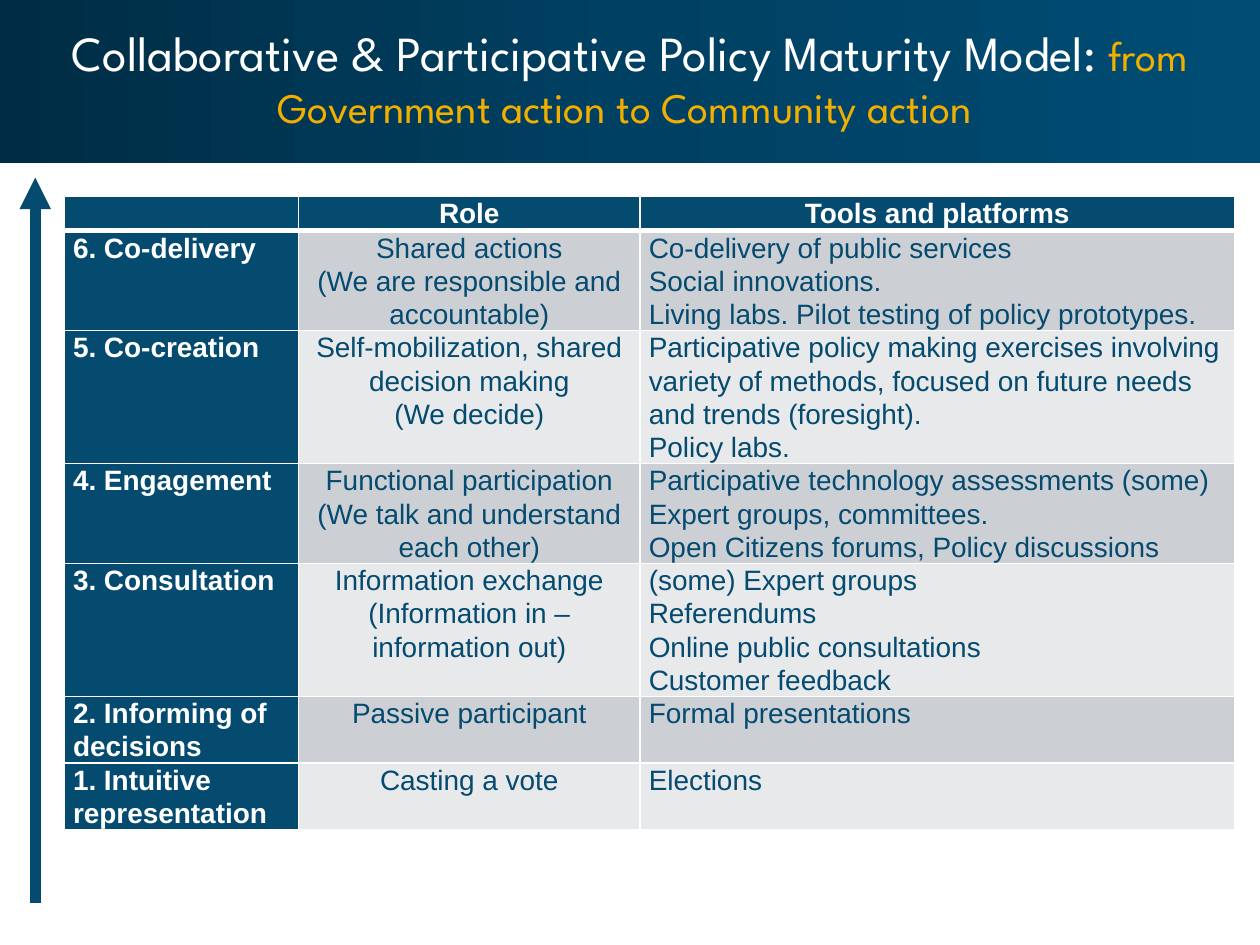
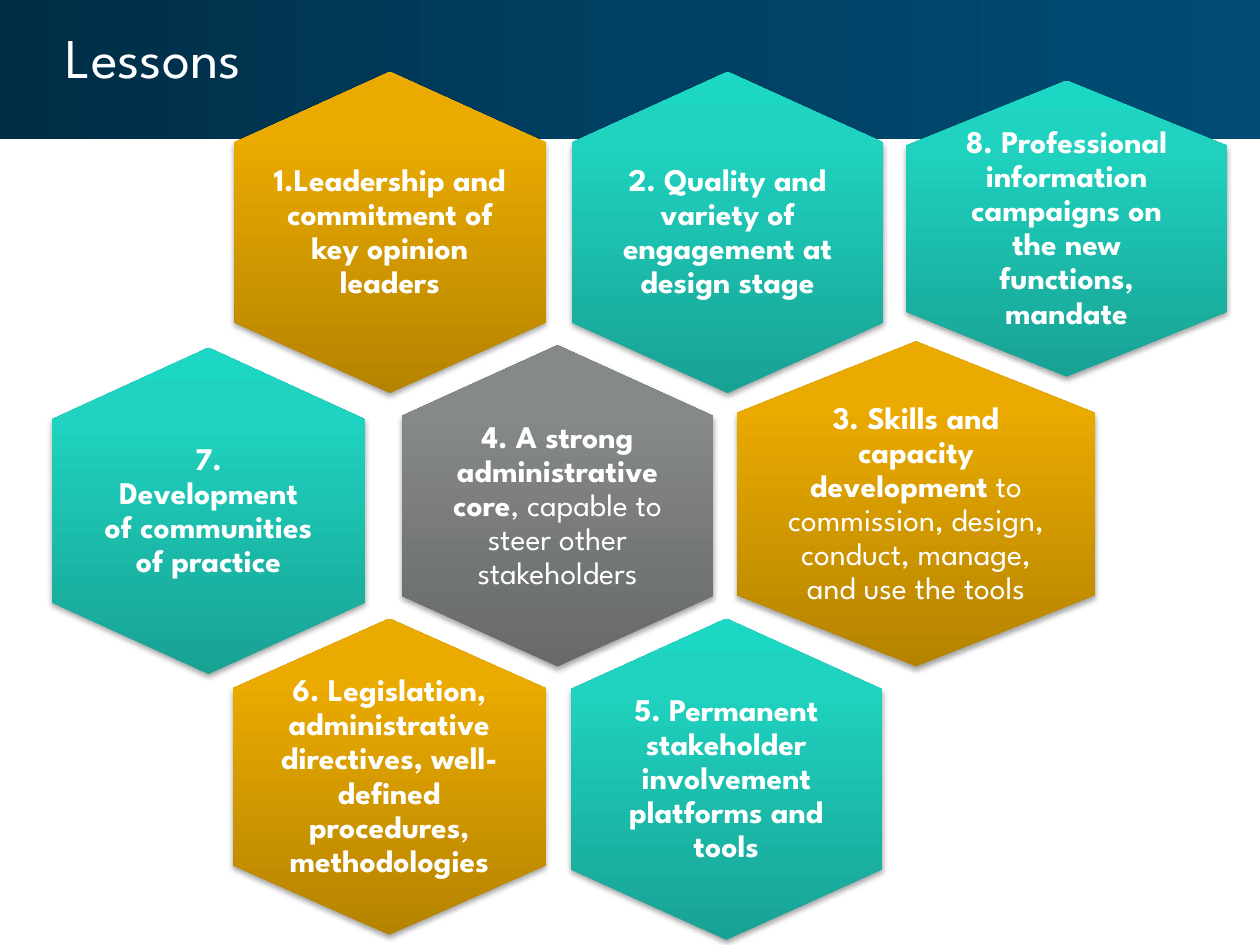
from lxml import etree
from pptx import Presentation
from pptx.dml.color import RGBColor
from pptx.enum.shapes import MSO_CONNECTOR, MSO_SHAPE
from pptx.enum.text import MSO_ANCHOR, MSO_AUTO_SIZE, PP_ALIGN
from pptx.oxml.ns import qn
from pptx.util import Inches, Pt

WHITE, NAVY, GOLD_TEXT = "FFFFFF", "054A6F", "F2AF00"
ROW_FILLS = ["CCD0D5", "E7E9EB"]
BAND = [(0, "002D45"), (50, "004062"), (100, "004C74")]
GOLD = [(0, "B58300"), (80, "EAAA00"), (100, "ECAA00")]
TEAL = [(0, "18A294"), (80, "1FD3C0"), (100, "1BD7C3")]
GREY = [(0, "67696A"), (80, "86898A"), (100, "87898B")]
TITLE_FONT, TABLE_FONT = "League Spartan", "Arial"
LEFT, CENTER = PP_ALIGN.LEFT, PP_ALIGN.CENTER

HEADER = ["", "Role", "Tools and platforms"]
LEVELS = [  # level, role, tools, number of text lines
    ("6. Co-delivery",
     ["Shared actions", "(We are responsible and accountable)"],
     ["Co-delivery of public services", "Social innovations.",
      "Living labs. Pilot testing of policy prototypes."], 3),
    ("5. Co-creation",
     ["Self-mobilization, shared decision making", "(We decide)"],
     ["Participative policy making exercises involving variety of methods, "
      "focused on future needs and trends (foresight).", "Policy labs."], 4),
    ("4. Engagement",
     ["Functional participation", "(We talk and understand each other)"],
     ["Participative technology assessments (some) Expert groups, committees.",
      "Open Citizens forums, Policy discussions"], 3),
    ("3. Consultation",
     ["Information exchange", "(Information in – information out)"],
     ["(some) Expert groups", "Referendums", "Online public consultations",
      "Customer feedback"], 4),
    ("2. Informing of decisions", ["Passive participant"],
     ["Formal presentations"], 2),
    ("1. Intuitive representation", ["Casting a vote"], ["Elections"], 2),
]
LINE_HEIGHT = 0.26

LESSONS = [  # left, top, width, height, gradient, side inset, bold text, plain text
    (5.85, 2.71, 2.84, 2.58, GOLD, 0.4, "3. Skills and capacity development",
     " to commission, design, conduct, manage, and use the tools"),
    (1.86, 0.57, 2.47, 2.55, GOLD, 0.31,
     "1.Leadership and commitment of key opinion leaders", ""),
    (3.19, 2.74, 2.47, 2.55, GREY, 0.38, "4. A strong administrative core",
     ", capable to steer other stakeholders"),
    (4.54, 0.57, 2.47, 2.55, TEAL, 0.31,
     "2. Quality and variety of engagement at design stage", ""),
    (4.53, 4.91, 2.47, 2.55, TEAL, 0.39,
     "5. Permanent stakeholder involvement platforms and tools", ""),
    (1.85, 4.91, 2.48, 2.51, GOLD, 0.31,
     "6. Legislation, administrative directives, well-defined procedures, "
     "methodologies", ""),
    (0.41, 2.76, 2.49, 2.59, TEAL, 0.4,
     "7. Development of communities of practice", ""),
    (7.19, 0.64, 2.55, 2.35, TEAL, 0.39,
     "8. Professional information campaigns on the new functions, mandate", ""),
]


def rgb(color):
    return RGBColor.from_string(color)


def add_xml(parent, tag, **attrs):
    el = etree.SubElement(parent, qn(tag))
    for name, value in attrs.items():
        el.set(name, str(value))
    return el


def add_run(p, text, size, font, color=WHITE, bold=False):
    r = p.add_run()
    r.text = text
    for name, value in {"size": Pt(size), "name": font, "bold": bold}.items():
        setattr(r.font, name, value)
    r.font.color.rgb = rgb(color)


def set_gradient(shape, stops, angle):
    """Fill with a linear gradient; the angle runs clockwise in degrees."""
    shape.fill.gradient()
    grad = shape._element.spPr.find(qn("a:gradFill"))
    grad.find(qn("a:lin")).set("ang", str(angle * 60000))
    gs_list = grad.find(qn("a:gsLst"))
    for gs in list(gs_list):
        gs_list.remove(gs)
    for pos, color in stops:
        add_xml(add_xml(gs_list, "a:gs", pos=pos * 1000), "a:srgbClr", val=color)
    shape.line.fill.background()
    shape.shadow.inherit = False


def add_titled_slide(prs, band_top, band_height, left, width, align, runs):
    s = prs.slides.add_slide(prs.slide_layouts[5])
    for top, height in [(band_top, band_height), (0, 0.84)]:
        band = s.shapes.add_shape(MSO_SHAPE.RECTANGLE, 0, Inches(top),
                                  prs.slide_width, Inches(height))
        set_gradient(band, BAND, 0)
    title = s.shapes.title
    s.shapes._spTree.append(title._element)  # in front of the bands
    place = {"left": left, "top": 0.13, "width": width, "height": 1.02}
    for name, value in place.items():
        setattr(title, name, Inches(value))
    tf = title.text_frame
    tf.auto_size, tf.vertical_anchor = MSO_AUTO_SIZE.NONE, MSO_ANCHOR.TOP
    p = tf.paragraphs[0]
    p.alignment = align
    for text, size, color in runs:
        add_run(p, text, size, TITLE_FONT, color)
    return s


def set_borders(cell, bottom):
    tcPr = cell._tc.get_or_add_tcPr()
    for side, width in {"L": 1, "R": 1, "T": 1, "B": bottom}.items():
        ln = add_xml(tcPr, f"a:ln{side}", w=Pt(width))
        add_xml(add_xml(ln, "a:solidFill"), "a:srgbClr", val=WHITE)


def fill_cell(cell, lines, fill, color, bold, align, bottom=1):
    set_borders(cell, bottom)
    cell.fill.solid()
    cell.fill.fore_color.rgb = rgb(fill)
    margins = {"margin_left": 0.07, "margin_right": 0.07,
               "margin_top": 0, "margin_bottom": 0}
    for name, value in margins.items():
        setattr(cell, name, Inches(value))
    tf = cell.text_frame
    for i, line in enumerate(lines):
        p = tf.add_paragraph() if i else tf.paragraphs[0]
        p.alignment, p.line_spacing = align, 1.07
        if line:
            add_run(p, line, 16, TABLE_FONT, color, bold)
        else:
            add_xml(p._p, "a:endParaRPr", sz=1600)


def add_maturity_table(s):
    line_counts = [1] + [level[3] for level in LEVELS]
    frame = s.shapes.add_table(len(line_counts), len(HEADER), Inches(0.51), Inches(1.56),
                               Inches(9.29), Inches(LINE_HEIGHT * sum(line_counts)))
    table = frame.table
    for column, width in zip(table.columns, [1.86, 2.71, 4.72]):
        column.width = Inches(width)
    for row, count in zip(table.rows, line_counts):
        row.height = Inches(LINE_HEIGHT * count)
    for col, text in enumerate(HEADER):
        fill_cell(table.cell(0, col), [text], NAVY, WHITE, True, CENTER, bottom=3)
    for row, (level, role, tools, _) in enumerate(LEVELS, 1):
        fill = ROW_FILLS[(row - 1) % 2]
        fill_cell(table.cell(row, 0), [level], NAVY, WHITE, True, LEFT)
        fill_cell(table.cell(row, 1), role, fill, NAVY, False, CENTER)
        fill_cell(table.cell(row, 2), tools, fill, NAVY, False, LEFT)


def add_up_arrow(s, x, bottom, top):
    arrow = s.shapes.add_connector(MSO_CONNECTOR.STRAIGHT, Inches(x), Inches(bottom),
                                   Inches(x), Inches(top))
    arrow.line.color.rgb = rgb(NAVY)
    arrow.line.width = Pt(6)
    add_xml(arrow.line._get_or_add_ln(), "a:tailEnd", type="triangle")
    add_xml(arrow._element.spPr, "a:effectLst")


def add_hexagon(s, left, top, width, height, stops, inset, bold_text, plain_text):
    right, bottom, middle = left + width, top + height, left + width / 2
    shoulder = 0.22 * height
    points = [(right, top + shoulder), (right, bottom - shoulder), (middle, bottom),
              (left, bottom - shoulder), (left, top + shoulder)]
    builder = s.shapes.build_freeform(Inches(middle), Inches(top))
    builder.add_line_segments([(Inches(x), Inches(y)) for x, y in points])
    hexagon = builder.convert_to_shape()
    set_gradient(hexagon, stops, 270)
    effects = hexagon._element.spPr.find(qn("a:effectLst"))
    shadow = add_xml(effects, "a:outerShdw", blurRad=Pt(3.1), dist=Pt(1.8),
                     dir=90 * 60000, rotWithShape=0)
    add_xml(add_xml(shadow, "a:srgbClr", val="000000"), "a:alpha", val=35000)

    tf = hexagon.text_frame
    tf.word_wrap, tf.vertical_anchor = True, MSO_ANCHOR.MIDDLE
    tf.margin_left = tf.margin_right = Inches(inset)
    tf.margin_top = tf.margin_bottom = Inches(inset + 0.05)
    p = tf.paragraphs[0]
    p.alignment, p.line_spacing = CENTER, 0.9
    add_run(p, bold_text, 18, TITLE_FONT, bold=True)
    if plain_text:
        add_run(p, plain_text, 18, TITLE_FONT)


def main():
    prs = Presentation()
    prs.slide_width, prs.slide_height = Inches(10), Inches(7.5)

    s = add_titled_slide(prs, 0, 1.29, 0, 10, CENTER, [
        ("Collaborative & Participative Policy Maturity Model: ", 28, WHITE),
        ("from Government action to Community action ", 24, GOLD_TEXT)])
    add_maturity_table(s)
    add_up_arrow(s, 0.28, 7.17, 1.41)

    s = add_titled_slide(prs, 0.03, 1.07, 0.42, 9.03, LEFT, [("Lessons", 32, WHITE)])
    for lesson in LESSONS:
        add_hexagon(s, *lesson)

    prs.save("out.pptx")


if __name__ == "__main__":
    main()
